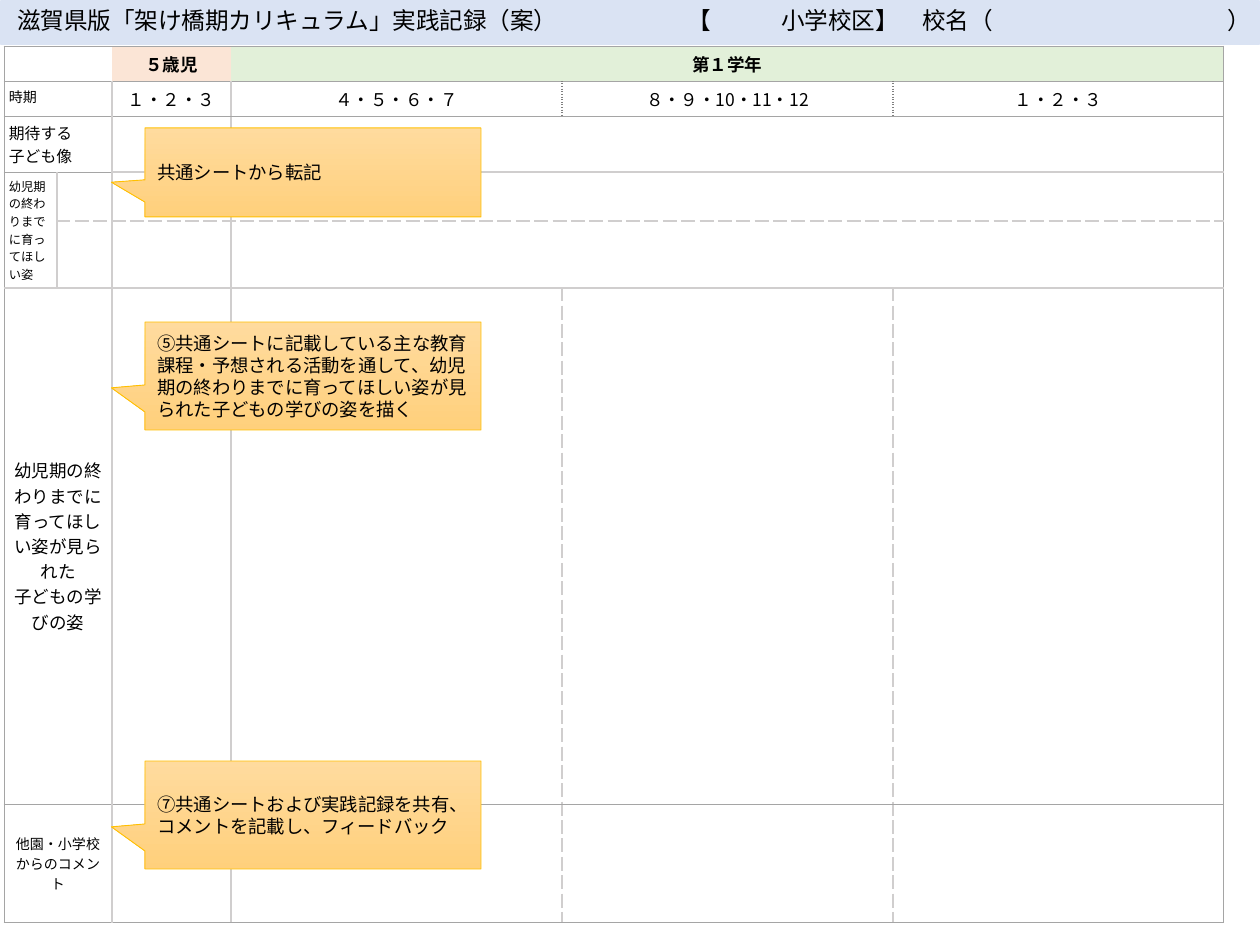
from dataclasses import dataclass
from itertools import accumulate

from lxml.etree import SubElement
from pptx import Presentation
from pptx.dml.color import RGBColor as RGB
from pptx.enum.shapes import MSO_SHAPE as SHAPE
from pptx.enum.text import MSO_ANCHOR as ANCHOR, PP_ALIGN as ALIGN
from pptx.oxml.ns import qn
from pptx.util import Emu, Pt


@dataclass(frozen=True)
class Theme:
    """Colours, font and type sizes of the record sheet."""
    font: str = "Noto Sans CJK JP"
    ink: str = "000000"
    banner: str = "DAE3F3"
    infant: str = "FBE5D6"
    grade: str = "E2F0D9"
    note_top: str = "FFDB9E"
    note_bottom: str = "FFD07C"
    note_line: str = "FFC000"
    title: float = 13.5
    note: float = 10.5
    note_leading: float = 12.6
    head: float = 10
    label: float = 9
    small: float = 8
    tiny: float = 7


T = Theme()
FRAME = ("A5A5A5", 0.5, "solid")
THIN = ("D0CECE", 0.75, "solid")
LIGHT = ("D0CECE", 1, "solid")
DASH = ("D0CECE", 1, "sysDash")
DOT = ("808080", 1, "sysDot")

COLS = [53, 19, 36, 119, 331, 331, 331]
ROWS = [35, 35, 55, 49, 66, 516, 119]
MERGES = [(0, 0, 0, 1), (0, 4, 0, 6), (1, 0, 1, 1), (2, 0, 2, 2), (2, 4, 2, 6),
          (3, 0, 4, 0), (3, 1, 3, 2), (3, 4, 3, 6), (4, 1, 4, 2), (4, 4, 4, 6),
          (5, 0, 5, 2), (6, 0, 6, 2)]
C, L = ALIGN.CENTER, ALIGN.LEFT
TEXTS = {
    (0, 3): ("５歳児", T.head, C), (0, 4): ("第１学年", T.head, C),
    (1, 0): ("時期", T.small, L), (1, 3): ("１・２・３", T.head, C),
    (1, 4): ("４・５・６・７", T.head, C), (1, 5): ("８・９・10・11・12", T.head, C),
    (1, 6): ("１・２・３", T.head, C), (2, 0): ("期待する\n子ども像", T.label, L),
    (3, 0): ("幼児期の終わりまでに育ってほしい姿", T.tiny, L),
    (5, 0): ("幼児期の終わりまでに育ってほしい姿が見られた\n子どもの学びの姿", T.head, C),
    (6, 0): ("他園・小学校からのコメント", T.small, C),
}
FILLS = {(0, 3): T.infant, (0, 4): T.grade, (0, 5): T.grade, (0, 6): T.grade}
VERTICAL = {(3, 0), (5, 0), (6, 0)}
NOTES = [
    (128, 89, "共通シートから転記"),
    (322, 108, "⑤共通シートに記載している主な教育課程・予想される活動を通して、"
               "幼児期の終わりまでに育ってほしい姿が見られた子どもの学びの姿を描く"),
    (761, 108, "⑦共通シートおよび実践記録を共有、コメントを記載し、フィードバック"),
]


def px(n):
    """Turn px into EMU."""
    return Emu(round(n * 914400 / 126))


def box(*lengths):
    """Turn left, top, width and height into EMU."""
    return [px(n) for n in lengths]


def write(tf, text, size, align=L, bold=False, leading=None):
    """Fill a text frame with evenly styled paragraphs."""
    tf.text = text
    tf.word_wrap = True
    for p in tf.paragraphs:
        p.alignment = align
        p.font.size, p.font.bold, p.font.name = Pt(size), bold, T.font
        p.font.color.rgb = RGB.from_string(T.ink)
        SubElement(p._p.pPr.find(qn("a:defRPr")), qn("a:ea"), typeface=T.font)
        if leading:
            p.line_spacing = Pt(leading)


def row_line(y, col):
    """Return the style of the horizontal rule at y over a column."""
    if y == 3:
        return FRAME if col < 3 else LIGHT
    if y == 4:
        return DASH if col else None
    return LIGHT if y == 5 else FRAME


def col_line(x, row):
    """Return the style of the vertical rule at x beside a row."""
    if x in (0, 7):
        return FRAME
    if x == 1:
        return THIN if row in (3, 4) else None
    if x == 2 or row == 0:
        return None
    if x == 3:
        return THIN if 2 <= row <= 5 else LIGHT
    if x == 4:
        return LIGHT
    return DOT if row == 1 else DASH if row >= 5 else None


def set_borders(cell, row, col):
    """Draw the rules round a cell or the block it heads."""
    wide = cell.span_width if cell.is_merge_origin else 1
    tall = cell.span_height if cell.is_merge_origin else 1
    edges = {"L": col_line(col, row), "R": col_line(col + wide, row),
             "T": row_line(row, col), "B": row_line(row + tall, col)}
    tcPr = cell._tc.get_or_add_tcPr()
    for side, style in edges.items():
        ln = SubElement(tcPr, qn(f"a:ln{side}"))
        if not style:
            SubElement(ln, qn("a:noFill"))
            continue
        color, width, dash = style
        ln.set("w", str(Pt(width)))
        SubElement(SubElement(ln, qn("a:solidFill")), qn("a:srgbClr"), val=color)
        SubElement(ln, qn("a:prstDash"), val=dash)


def add_banner(slide, x, y, w, h):
    """Add the title band with the school fields."""
    shapes = slide.shapes.add_group_shape().shapes
    sp = shapes.add_shape(SHAPE.ROUNDED_RECTANGLE, *box(x, y, w, h))
    sp.adjustments[0] = 0.03
    sp.shadow.inherit = False
    sp.fill.solid()
    sp.fill.fore_color.rgb = RGB.from_string(T.banner)
    sp.line.fill.background()
    for left, width, text in (
            (5, 665, "滋賀県版「架け橋期カリキュラム」実践記録（案）"),
            (675, 600, "【　　　小学校区】　校名（　　　　　　　　　　）")):
        tb = shapes.add_textbox(*box(x + left, y, width, 42))
        write(tb.text_frame, text, T.title)


def add_record(slide, x, y):
    """Add the record table."""
    frame = slide.shapes.add_table(len(ROWS), len(COLS), *box(x, y, sum(COLS), sum(ROWS)))
    table = frame.table
    table.first_row = table.horz_banding = False
    for line, edge, before in zip(table.columns, accumulate(COLS), accumulate([0] + COLS)):
        line.width = px(edge) - px(before)
    for line, height in zip(table.rows, ROWS):
        line.height = px(height)
    for top, left, bottom, right in MERGES:
        table.cell(top, left).merge(table.cell(bottom, right))
    for row in range(len(ROWS)):
        for col in range(len(COLS)):
            cell, key = table.cell(row, col), (row, col)
            text, size, align = TEXTS.get(key, ("", T.small, L))
            write(cell.text_frame, text, size, align, bold=row == 0)
            cell.margin_left = cell.margin_right = px(5)
            cell.margin_top = cell.margin_bottom = px(5)
            if row >= 5 and col == 0:
                cell.vertical_anchor = ANCHOR.MIDDLE
            if key in VERTICAL:
                cell._tc.get_or_add_tcPr().set("vert", "eaVert")
            set_borders(cell, row, col)
            if key in FILLS:
                cell.fill.solid()
                cell.fill.fore_color.rgb = RGB.from_string(FILLS[key])
            else:
                cell.fill.background()


def add_note(slide, x, y, w, h, text):
    """Add a callout pointing to the row labels."""
    sp = slide.shapes.add_shape(SHAPE.RECTANGULAR_CALLOUT, *box(x, y, w, h))
    sp.adjustments[0], sp.adjustments[1] = -0.6, 0.11
    sp.shadow.inherit = False
    sp.fill.gradient()
    sp.fill.gradient_angle = 270
    for stop, color in zip(sp.fill.gradient_stops, (T.note_top, T.note_bottom)):
        stop.color.rgb = RGB.from_string(color)
    sp.line.color.rgb = RGB.from_string(T.note_line)
    sp.line.width = Pt(0.5)
    sp.text_frame.vertical_anchor = ANCHOR.MIDDLE
    write(sp.text_frame, text, T.note, leading=T.note_leading)


def main():
    """Build the slide and save it."""
    prs = Presentation()
    prs.slide_width, prs.slide_height = px(1260), px(945)
    slide = prs.slides.add_slide(prs.slide_layouts[6])
    add_record(slide, 4, 46)
    for top, height, text in NOTES:
        add_note(slide, 145, top, 336, height, text)
    add_banner(slide, 0, 0, 1260, 45)
    prs.save("out.pptx")


if __name__ == "__main__":
    main()
